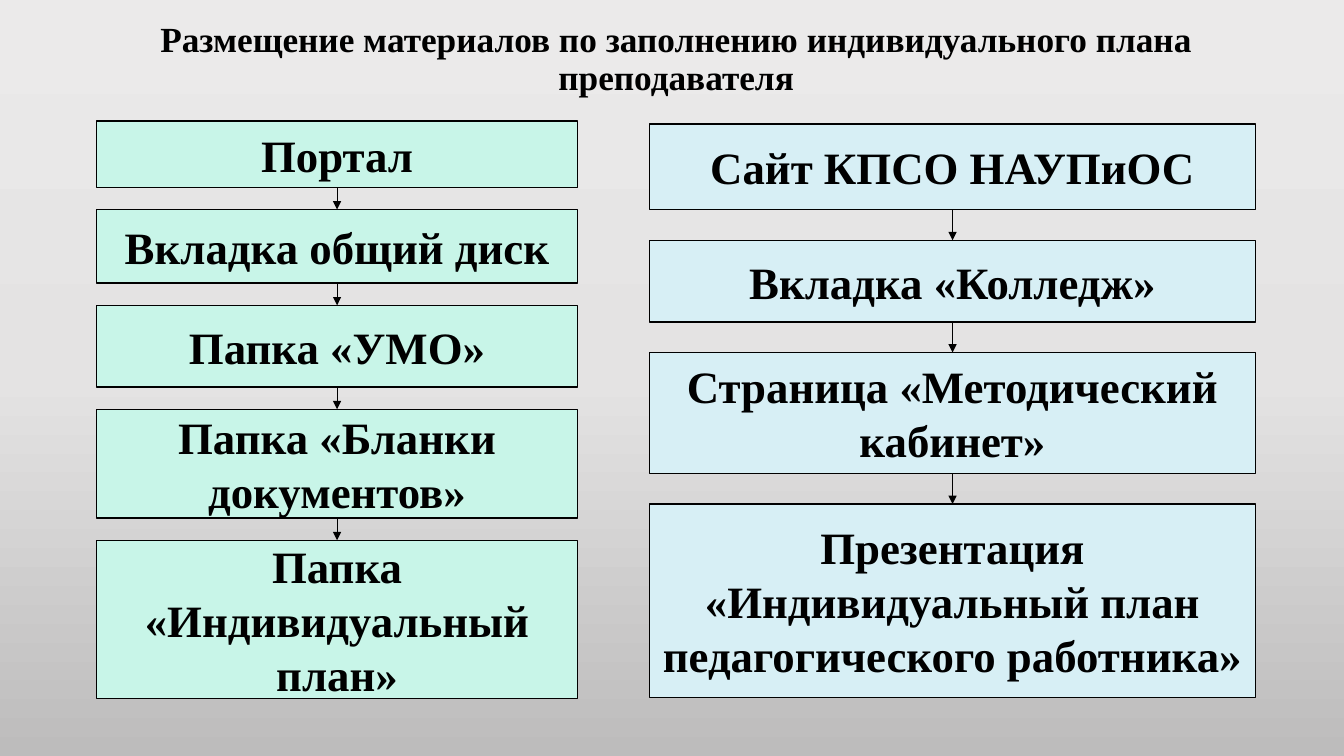
from copy import deepcopy

from lxml.etree import SubElement
from pptx import Presentation
from pptx.dml.color import RGBColor
from pptx.enum.shapes import MSO_CONNECTOR as CONN, MSO_SHAPE as SHAPE
from pptx.enum.text import MSO_ANCHOR as ANCHOR, PP_ALIGN as ALIGN
from pptx.oxml.ns import qn
from pptx.util import Pt


def rgb(color):
    return RGBColor.from_string(color)


def write(sp, text, size):
    """Put bold, centred text in a shape and return its paragraph."""
    tf = sp.text_frame
    tf.word_wrap = True
    tf.vertical_anchor = ANCHOR.MIDDLE
    p = tf.paragraphs[0]
    p.alignment = ALIGN.CENTER
    r = p.add_run()
    r.text = text
    r.font.name = "Times New Roman"
    r.font.size = Pt(size)
    r.font.bold = True
    r.font.color.rgb = rgb("000000")
    return p


prs = Presentation()
prs.slide_width, prs.slide_height = Pt(960), Pt(540)
s = prs.slides.add_slide(prs.slide_layouts[6])

# Background: three-stop vertical gradient
fill = s.background.fill
fill.gradient()
fill.gradient_angle = 270
stop_list = s.element.find(".//" + qn("a:gsLst"))
stop_list.append(deepcopy(stop_list[0]))
stops = [(0, "EBEAEA"), (0.5, "E4E3E3"), (1, "BDBCBC")]
for stop, (position, color) in zip(fill.gradient_stops, stops):
    stop.position = position
    stop.color.rgb = rgb(color)

title = s.shapes.add_textbox(Pt(69), Pt(9.4), Pt(828), Pt(67))
p = write(title, "Размещение материалов по заполнению индивидуального плана преподавателя", 25.2)
p.line_spacing = 0.9

# Each column: left, top, width, gap, fill, steps as (text, height)
columns = [
    (69, 86.4, 343.6, 15.8, "C8F5E8", [
        ("Портал", 47.5),
        ("Вкладка общий диск", 52.6),
        ("Папка «УМО»", 58.4),
        ("Папка «Бланки документов»", 77.8),
        ("Папка «Индивидуальный план»", 113),
    ]),
    (463.8, 88.6, 433.2, 21.8, "D7EFF5", [
        ("Сайт КПСО НАУПиОС", 61.2),
        ("Вкладка «Колледж»", 58.4),
        ("Страница «Методический кабинет»", 86.4),
        ("Презентация «Индивидуальный план педагогического работника»", 138.4),
    ]),
]

for left, top, width, gap, color, steps in columns:
    previous = None
    for text, height in steps:
        box = s.shapes.add_shape(SHAPE.RECTANGLE, Pt(left), Pt(top), Pt(width), Pt(height))
        box.shadow.inherit = False
        box.fill.solid()
        box.fill.fore_color.rgb = rgb(color)
        box.line.color.rgb = rgb("000000")
        box.line.width = Pt(1)
        write(box, text, 32)

        if previous is not None:
            middle = Pt(left + width / 2)
            arrow = s.shapes.add_connector(CONN.STRAIGHT, middle, Pt(top - gap), middle, Pt(top))
            arrow.begin_connect(previous, 2)
            arrow.end_connect(box, 0)
            arrow.line.color.rgb = rgb("000000")
            arrow.line.width = Pt(0.5)
            SubElement(arrow.line._get_or_add_ln(), qn("a:tailEnd"), type="triangle")
            SubElement(arrow.element.spPr, qn("a:effectLst"))

        previous = box
        top += height + gap

prs.save("out.pptx")
